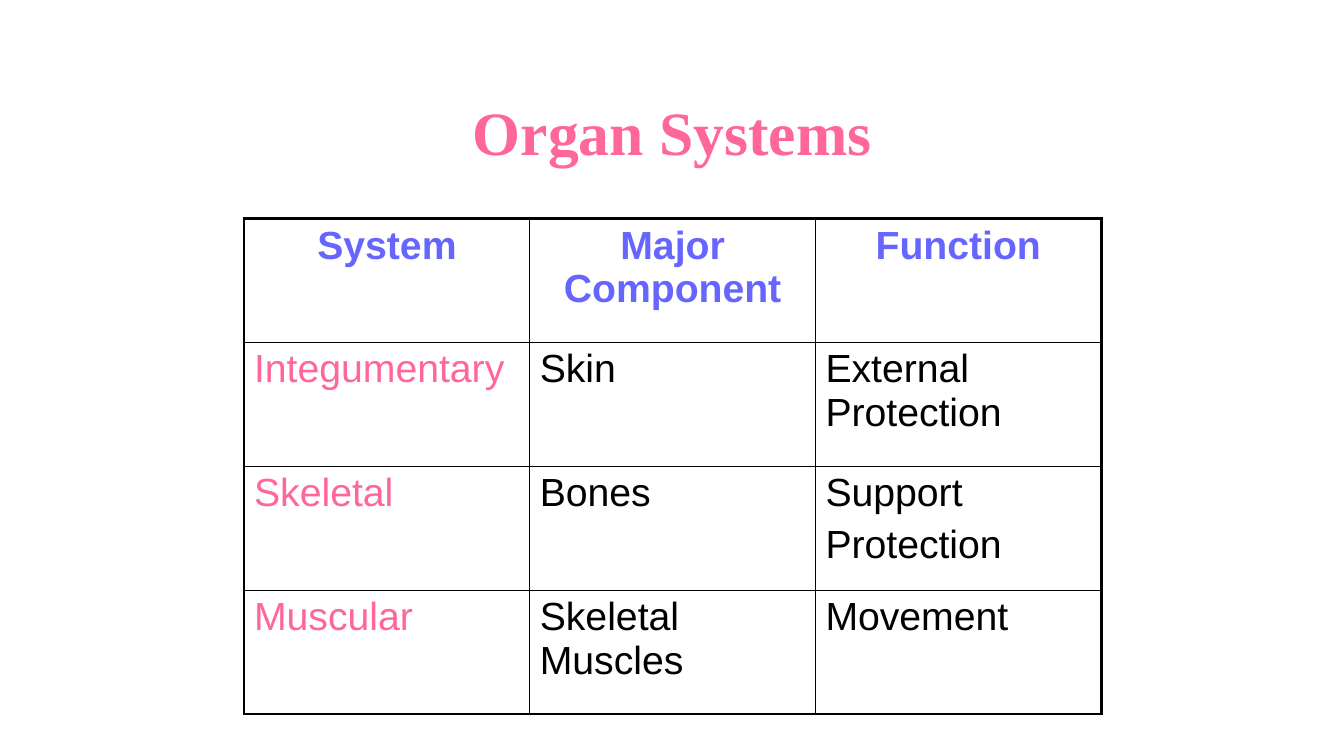
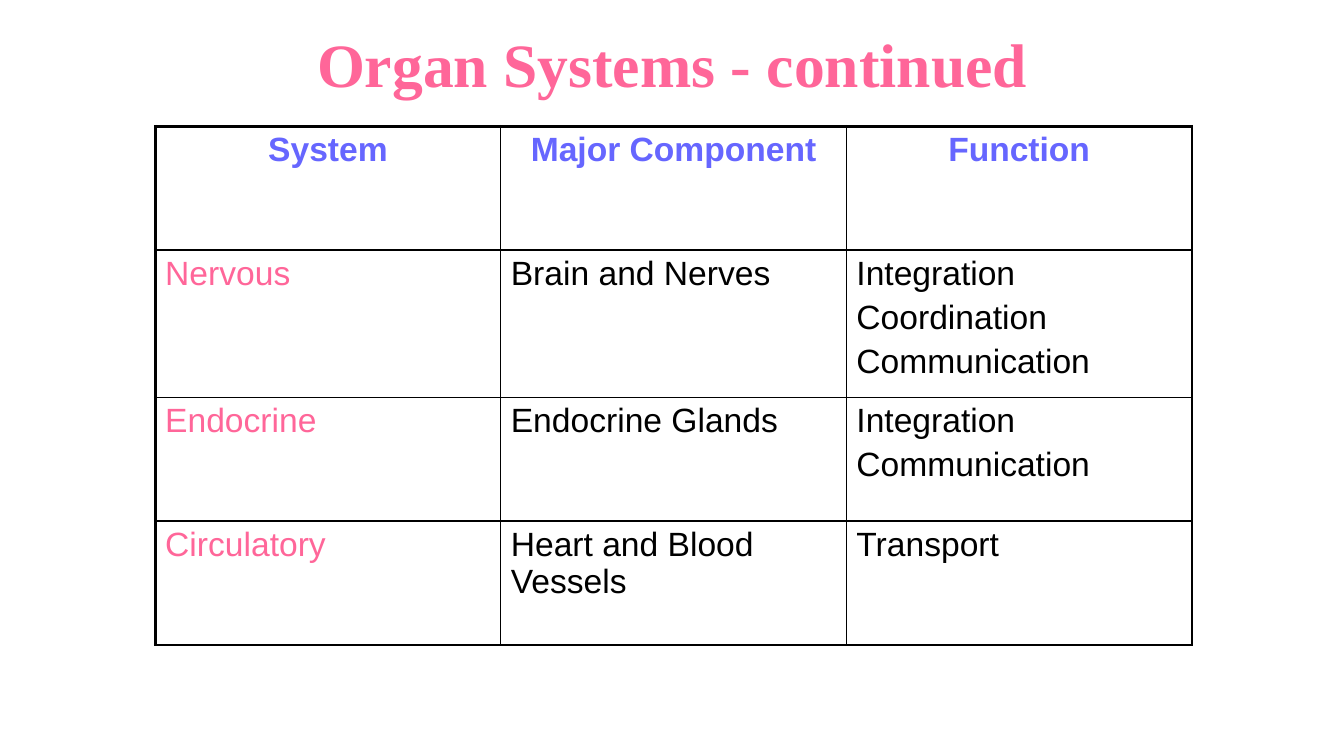
from lxml import etree
from pptx import Presentation
from pptx import util as u
from pptx.dml.color import RGBColor
from pptx.enum import text
from pptx.oxml.ns import qn

PINK, VIOLET, BLACK = "FF6699", "6666FF", "000000"
TITLE_FONT, BODY_FONT = "Times New Roman", "Arial"
THICK, THIN = 2.25, 1
TITLE_LEFT, TITLE_WIDTH, TITLE_HEIGHT = 6.15, 21.59, 3.18
HEADINGS = ("System", "Major Component", "Function")

SLIDES = [
    {
        "title": "Organ Systems", "title_top": 1.7, "size": 28,
        "left": 6.15, "top": 5.51, "column_width": 7.2,
        "row_heights": (3.12, 3.12, 3.12, 3.12),
        "systems": [
            ("Integumentary", "Skin", "External Protection"),
            ("Skeletal", "Bones", "Support\nProtection"),
            ("Muscular", "Skeletal Muscles", "Movement"),
        ],
    },
    {
        "title": "Organ Systems - continued", "title_top": 0, "size": 24,
        "left": 3.91, "top": 3.18, "column_width": 8.71,
        "row_heights": (3.12, 3.71, 3.12, 3.12),
        "systems": [
            ("Nervous", "Brain and Nerves", "Integration\nCoordination\nCommunication"),
            ("Endocrine", "Endocrine Glands", "Integration\nCommunication"),
            ("Circulatory", "Heart and Blood Vessels", "Transport"),
        ],
    },
]


def color(value):
    return RGBColor.from_string(value)


def add_run(paragraph, wording, font_name, size, value, bold):
    run = paragraph.add_run()
    run.text = wording
    run.font.name = font_name
    run.font.size = u.Pt(size)
    run.font.bold = bold
    run.font.color.rgb = color(value)


def add_title(slide, wording, top):
    title = slide.shapes.title
    title.left, title.top = u.Cm(TITLE_LEFT), u.Cm(top)
    title.width, title.height = u.Cm(TITLE_WIDTH), u.Cm(TITLE_HEIGHT)
    frame = title.text_frame
    frame.word_wrap = True
    frame.auto_size = text.MSO_AUTO_SIZE.NONE
    frame.vertical_anchor = text.MSO_ANCHOR.MIDDLE
    paragraph = frame.paragraphs[0]
    paragraph.alignment = text.PP_ALIGN.CENTER
    add_run(paragraph, wording, TITLE_FONT, 44, PINK, True)


def set_borders(cell, widths):
    properties = cell._tc.get_or_add_tcPr()
    for position, (side, width) in enumerate(widths.items()):
        line = etree.Element(qn(f"a:ln{side}"), w=str(int(u.Pt(width))))
        fill = etree.SubElement(line, qn("a:solidFill"))
        etree.SubElement(fill, qn("a:srgbClr"), val=BLACK)
        properties.insert(position, line)


def fill_cell(cell, wording, size, value, heading):
    cell.fill.background()
    frame = cell.text_frame
    for index, line in enumerate(wording.split("\n")):
        paragraph = frame.add_paragraph() if index else frame.paragraphs[0]
        paragraph.alignment = text.PP_ALIGN.CENTER if heading else text.PP_ALIGN.LEFT
        if index:
            paragraph.space_before = u.Pt(size * 0.2)
        add_run(paragraph, line, BODY_FONT, size, value, heading)


def add_systems_table(slide, content):
    rows = [HEADINGS] + content["systems"]
    heights = content["row_heights"]
    last_row, last_column = len(rows) - 1, len(HEADINGS) - 1
    table = slide.shapes.add_table(
        len(rows), len(HEADINGS), u.Cm(content["left"]), u.Cm(content["top"]),
        u.Cm(content["column_width"] * len(HEADINGS)), u.Cm(sum(heights))).table
    table.first_row = table.horz_banding = False
    for column in table.columns:
        column.width = u.Cm(content["column_width"])
    for r, (row, height) in enumerate(zip(rows, heights)):
        table.rows[r].height = u.Cm(height)
        for c, wording in enumerate(row):
            cell = table.cell(r, c)
            value = VIOLET if r == 0 else PINK if c == 0 else BLACK
            fill_cell(cell, wording, content["size"], value, r == 0)
            outer = {"L": c == 0, "R": c == last_column, "T": r == 0, "B": r == last_row}
            set_borders(cell, {side: THICK if edge else THIN for side, edge in outer.items()})


def main():
    presentation = Presentation()
    presentation.slide_width, presentation.slide_height = u.Cm(33.87), u.Cm(19.05)
    title_only = presentation.slide_layouts[5]
    for content in SLIDES:
        slide = presentation.slides.add_slide(title_only)
        add_title(slide, content["title"], content["title_top"])
        add_systems_table(slide, content)
    presentation.save("out.pptx")


if __name__ == "__main__":
    main()
